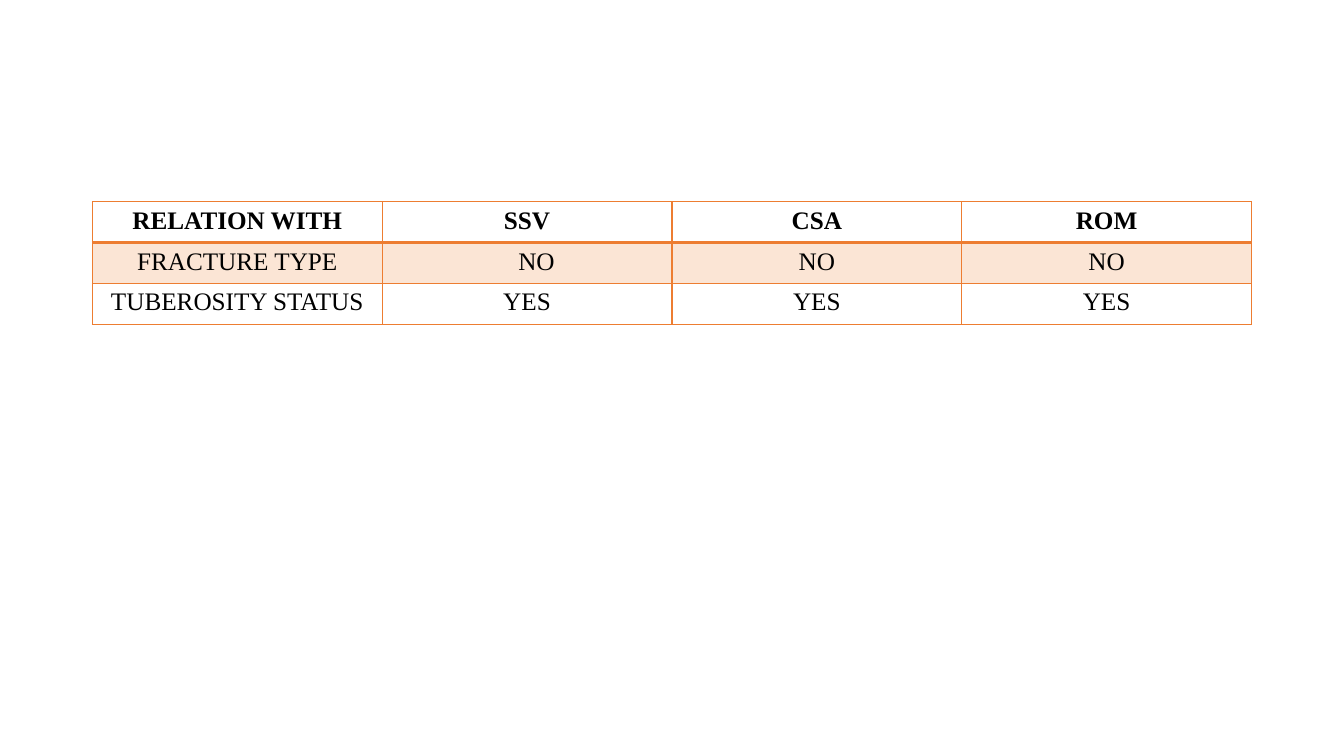
import dataclasses

import lxml.etree
import pptx
import pptx.dml.color
import pptx.enum.text
import pptx.oxml
import pptx.oxml.ns
import pptx.util


@dataclasses.dataclass(frozen=True)
class Theme:
    font: str = "Times New Roman"
    size: float = 18
    ink: str = "000000"
    accent: str = "ED7D31"
    band_alpha: int = 20
    border: float = 1
    header_rule: float = 2


def add_text(para, text, *, font, size, color, bold=False, indent=0):
    para.alignment = pptx.enum.text.PP_ALIGN.CENTER
    if indent:
        para._p.get_or_add_pPr().set("marL", str(pptx.util.Pt(indent)))
    span = para.add_run()
    span.text = text
    span.font.name = font
    span.font.size = pptx.util.Pt(size)
    span.font.bold = bold
    span.font.color.rgb = pptx.dml.color.RGBColor.from_string(color)


class Page:
    def __init__(self, deck, theme):
        self.theme = theme
        self.slide = deck.slides.add_slide(deck.slide_layouts[6])

    def border(self, cell, side, width):
        properties = cell._tc.get_or_add_tcPr()
        properties.append(pptx.oxml.parse_xml(
            f'<a:ln{side} {pptx.oxml.ns.nsdecls("a")} w="{pptx.util.Pt(width)}">'
            f'<a:solidFill><a:srgbClr val="{self.theme.accent}"/></a:solidFill>'
            f'</a:ln{side}>'))

    def tint(self, cell):
        cell.fill.solid()
        cell.fill.fore_color.rgb = pptx.dml.color.RGBColor.from_string(self.theme.accent)
        color = cell._tc.tcPr.find(pptx.oxml.ns.qn("a:solidFill"))[0]
        alpha = lxml.etree.SubElement(color, pptx.oxml.ns.qn("a:alpha"))
        alpha.set("val", str(self.theme.band_alpha * 1000))

    def table(self, rows, left, top, column_width, row_height, indents):
        columns = len(rows[0])
        table = self.slide.shapes.add_table(
            len(rows), columns, pptx.util.Pt(left), pptx.util.Pt(top),
            pptx.util.Pt(column_width * columns), pptx.util.Pt(row_height * len(rows))).table
        table.first_row = False
        table.horz_banding = False
        for row_index, labels in enumerate(rows):
            header = row_index == 0
            for column_index, label in enumerate(labels):
                cell = table.cell(row_index, column_index)
                for side in "LRTB":
                    heavy = header and side == "B"
                    self.border(cell, side, self.theme.header_rule if heavy else self.theme.border)
                if row_index % 2:
                    self.tint(cell)
                else:
                    cell.fill.background()
                add_text(cell.text_frame.paragraphs[0], label, font=self.theme.font,
                         size=self.theme.size, color=self.theme.ink, bold=header,
                         indent=indents.get((row_index, column_index), 0))


def main():
    deck = pptx.Presentation()
    deck.slide_width = pptx.util.Pt(960)
    deck.slide_height = pptx.util.Pt(540)
    page = Page(deck, Theme())
    relations = [
        ("RELATION WITH", "SSV", "CSA", "ROM"),
        ("FRACTURE TYPE", "NO", "NO", "NO"),
        ("TUBEROSITY STATUS", "YES", "YES", "YES"),
    ]
    page.table(relations, left=66, top=144, column_width=207, row_height=29.2,
               indents={(1, 1): 13.5})
    deck.save("out.pptx")


if __name__ == "__main__":
    main()
